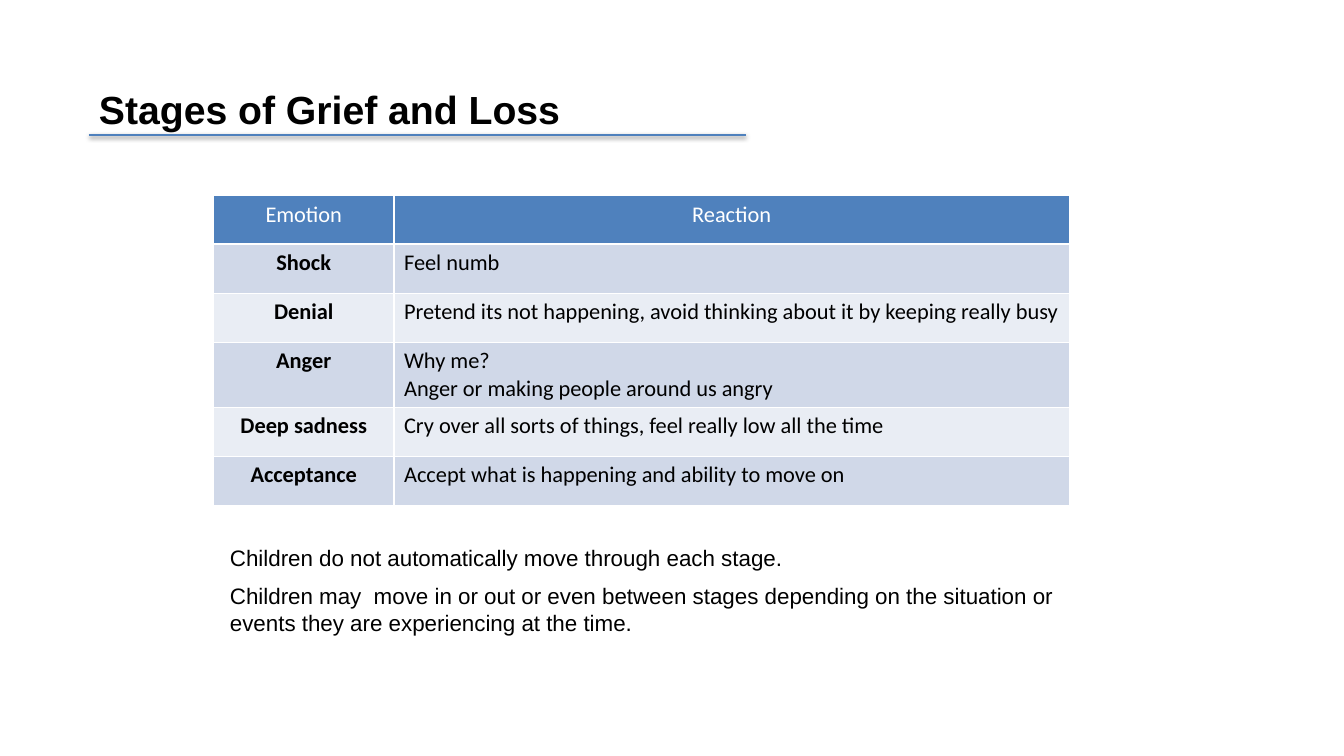
"""Build the slide on the stages of grief and loss."""
from lxml.etree import SubElement
from pptx import Presentation
from pptx.dml.color import RGBColor
from pptx.enum.shapes import MSO_CONNECTOR
from pptx.enum.text import MSO_ANCHOR, MSO_AUTO_SIZE, PP_ALIGN
from pptx.oxml.ns import qn
from pptx.util import Cm, Pt

BLACK = RGBColor(0x00, 0x00, 0x00)
WHITE = RGBColor(0xFF, 0xFF, 0xFF)
BLUE = RGBColor(0x4F, 0x81, 0xBD)
BAND_DARK = RGBColor(0xD0, 0xD8, 0xE8)
BAND_LIGHT = RGBColor(0xE9, 0xED, 0xF4)

TITLE = "Stages of Grief and Loss"
STAGES = [
    ("Emotion", "Reaction"),
    ("Shock", "Feel numb"),
    ("Denial", "Pretend its not happening, avoid thinking about it by keeping really busy"),
    ("Anger", "Why me?\nAnger or making people around us angry"),
    ("Deep sadness", "Cry over all sorts of things, feel really low all the time"),
    ("Acceptance", "Accept what is happening and ability to move on"),
]
REMARKS = [
    "Children do not automatically move through each stage.",
    "Children may  move in or out or even between stages depending on "
    "the situation or events they are experiencing at the time.",
]


def place(box, left, top, width, height):
    """Move and size a shape, with lengths in centimetres."""
    box.left, box.top = Cm(left), Cm(top)
    box.width, box.height = Cm(width), Cm(height)


def style_paragraph(paragraph, font_name, size, color, bold, alignment):
    """Align a paragraph and format its runs."""
    paragraph.alignment = alignment
    for span in paragraph.runs:
        span.font.name = font_name
        span.font.size = Pt(size)
        span.font.color.rgb = color
        span.font.bold = bold


def fill_title(box):
    """Set the slide title."""
    place(box, 2.24, 1.93, 15.7, 1.6)
    frame = box.text_frame
    frame.text = TITLE
    frame.auto_size = MSO_AUTO_SIZE.NONE
    frame.vertical_anchor = MSO_ANCHOR.MIDDLE
    style_paragraph(frame.paragraphs[0], "Arial", 28, BLACK, True, PP_ALIGN.LEFT)


def fill_remarks(box):
    """Set the remarks below the table, without bullets."""
    place(box, 5.54, 13.59, 21.59, 3.33)
    frame = box.text_frame
    frame.text = "\n".join(REMARKS)
    frame.auto_size = MSO_AUTO_SIZE.NONE
    for index, paragraph in enumerate(frame.paragraphs):
        properties = paragraph._p.get_or_add_pPr()
        properties.set("marL", "0")
        properties.set("indent", "0")
        SubElement(properties, qn("a:buNone"))
        paragraph.space_before = Pt(8 if index else 0)
        style_paragraph(paragraph, "Arial", 16, BLACK, False, PP_ALIGN.LEFT)


def add_title_rule(page):
    """Draw the shadowed line under the title."""
    rule = page.shapes.add_connector(
        MSO_CONNECTOR.STRAIGHT, Cm(2.24), Cm(3.4), Cm(18.8), Cm(3.4))
    rule.line.color.rgb = BLUE
    rule.line.width = Pt(2)
    effects = SubElement(rule._element.spPr, qn("a:effectLst"))
    shadow = SubElement(effects, qn("a:outerShdw"), blurRad=str(Pt(3.1)),
                        dist=str(Pt(1.6)), dir="5400000", rotWithShape="0")
    color = SubElement(shadow, qn("a:srgbClr"), val=str(BLACK))
    SubElement(color, qn("a:alpha"), val="38000")


def fill_cell(cell, text, fill, color, bold, alignment):
    """Write and colour one table cell."""
    cell.fill.solid()
    cell.fill.fore_color.rgb = fill
    cell.text_frame.text = text
    for paragraph in cell.text_frame.paragraphs:
        style_paragraph(paragraph, "Calibri", 16, color, bold, alignment)


def add_stage_table(page):
    """Add the table of emotions and reactions."""
    table = page.shapes.add_table(
        len(STAGES), 2, Cm(5.38), Cm(4.93), Cm(21.57), Cm(7.42)).table
    for column, width in zip(table.columns, (4.55, 17.02)):
        column.width = Cm(width)
    for row_index, texts in enumerate(STAGES):
        is_header = row_index == 0
        table.rows[row_index].height = Cm(1.22 if is_header else 1.24)
        band = BAND_DARK if row_index % 2 else BAND_LIGHT
        for column_index, text in enumerate(texts):
            is_emotion = column_index == 0
            fill_cell(
                table.cell(row_index, column_index), text,
                BLUE if is_header else band,
                WHITE if is_header else BLACK,
                is_emotion and not is_header,
                PP_ALIGN.CENTER if is_header or is_emotion else PP_ALIGN.LEFT)


def main():
    """Create the deck and save it."""
    deck = Presentation()
    deck.slide_width, deck.slide_height = Cm(33.87), Cm(19.05)
    page = deck.slides.add_slide(deck.slide_layouts.get_by_name("Title and Content"))
    fill_title(page.shapes.title)
    fill_remarks(page.placeholders[1])
    add_title_rule(page)
    add_stage_table(page)
    deck.save("out.pptx")


if __name__ == "__main__":
    main()
